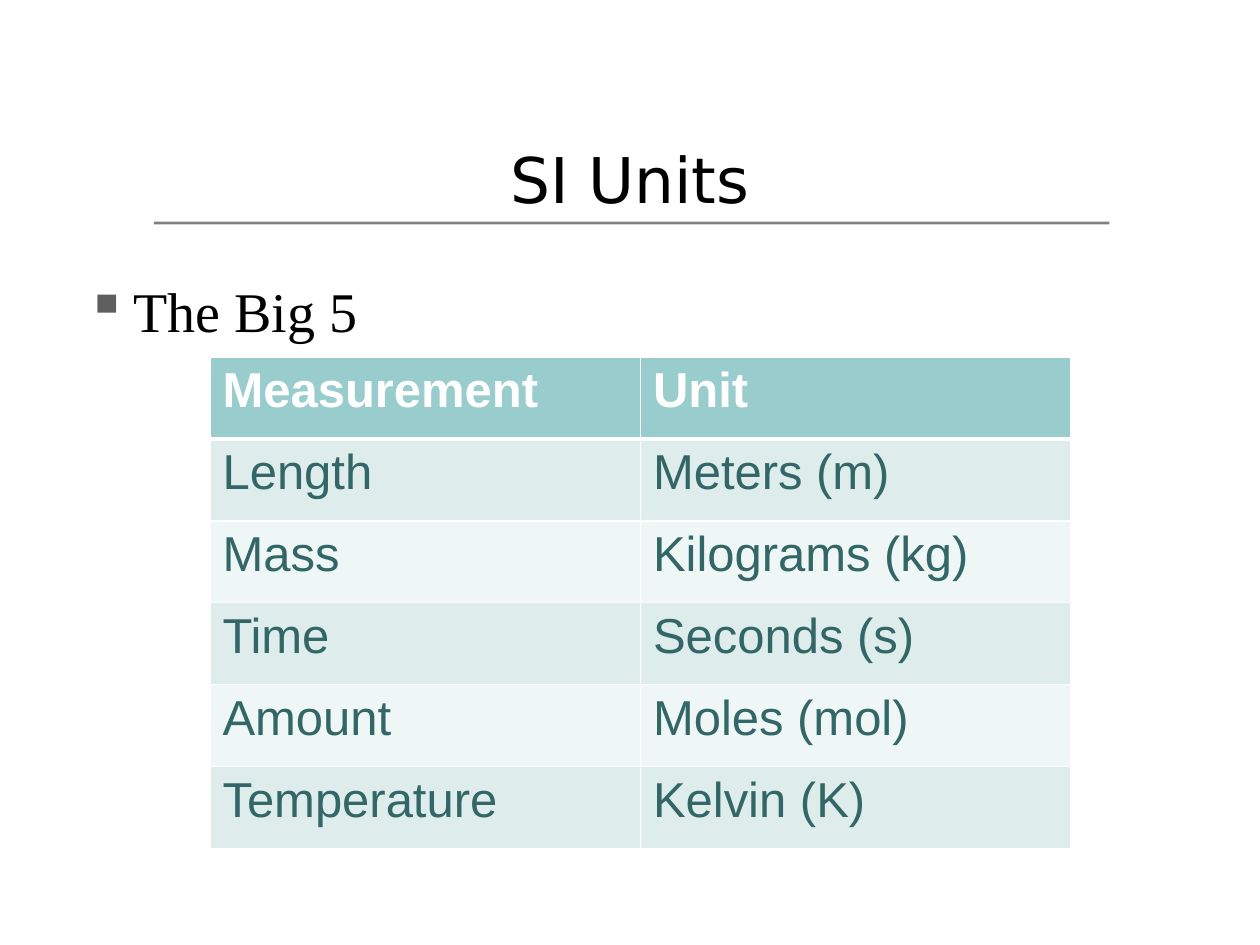
import pptx
import pptx.util
import pptx.dml.color
import pptx.enum.shapes
import pptx.enum.text
import pptx.oxml
import pptx.oxml.ns
from lxml import etree

Pt = pptx.util.Pt
qn = pptx.oxml.ns.qn

TITLE = "SI Units"
POINT = "The Big 5"
ROWS = [
    ("Measurement", "Unit"),
    ("Length", "Meters (m)"),
    ("Mass", "Kilograms (kg)"),
    ("Time", "Seconds (s)"),
    ("Amount", "Moles (mol)"),
    ("Temperature", "Kelvin (K)"),
]
THEME = {
    "title": ("DejaVu Sans", 36, "000000"),
    "point": ("Times New Roman", 32, "000000"),
    "head": ("Arial", 28, "FFFFFF"),
    "cell": ("Arial", 28, "336666"),
    "rule": "808080",
    "bullet": "5F5F5F",
    "grid": "FFFFFF",
    "top": "99CCCC",
    "bands": ("DEECEC", "EFF6F6"),
}
COL, ROW = 246, 46.8


def paint(fill, color):
    fill.solid()
    fill.fore_color.rgb = pptx.dml.color.RGBColor.from_string(color)


def style(para, role, bold=False):
    name, size, color = THEME[role]
    for run in para.runs:
        run.font.name, run.font.size, run.font.bold = name, Pt(size), bold
        paint(run.font.fill, color)


def place(shape, left, top, width, height):
    shape.left, shape.top = Pt(left), Pt(top)
    shape.width, shape.height = Pt(width), Pt(height)


def add_bullet(para, indent):
    props = para._p.get_or_add_pPr()
    props.set("marL", str(Pt(indent)))
    props.set("indent", str(-Pt(indent)))
    color = etree.SubElement(props, qn("a:buClr"))
    etree.SubElement(color, qn("a:srgbClr"), val=THEME["bullet"])
    etree.SubElement(props, qn("a:buChar"), char="▪")


def edge(cell, top, bottom):
    """Draw the cell's borders, one point wide at the sides."""
    props = cell._tc.get_or_add_tcPr()
    for side, width in (("L", 1), ("R", 1), ("T", top), ("B", bottom)):
        line = etree.SubElement(props, qn("a:ln" + side), w=str(Pt(width)))
        fill = etree.SubElement(line, qn("a:solidFill"))
        etree.SubElement(fill, qn("a:srgbClr"), val=THEME["grid"])


def add_units(slide):
    frame = slide.shapes.add_table(
        len(ROWS), 2, Pt(120), Pt(204), Pt(2 * COL), Pt(len(ROWS) * ROW))
    table = frame.table
    for col in table.columns:
        col.width = Pt(COL)
    for i, texts in enumerate(ROWS):
        table.rows[i].height = Pt(ROW)
        head = i == 0
        color = THEME["top"] if head else THEME["bands"][(i - 1) % 2]
        for j, text in enumerate(texts):
            cell = table.cell(i, j)
            edge(cell, 3 if i == 1 else 1, 3 if head else 1)
            paint(cell.fill, color)
            cell.text_frame.text = text
            style(cell.text_frame.paragraphs[0], "head" if head else "cell", head)


def main():
    deck = pptx.Presentation()
    deck.slide_width, deck.slide_height = Pt(720), Pt(540)
    slide = deck.slides.add_slide(deck.slide_layouts[5])

    title = slide.shapes.title
    place(title, 0, 66, 720, 72)
    title.text_frame.text = TITLE
    title.text_frame.vertical_anchor = pptx.enum.text.MSO_ANCHOR.MIDDLE
    para = title.text_frame.paragraphs[0]
    para.alignment = pptx.enum.text.PP_ALIGN.CENTER
    style(para, "title")

    rule = slide.shapes.add_shape(
        pptx.enum.shapes.MSO_SHAPE.RECTANGLE, Pt(88), Pt(126.7), Pt(546), Pt(1.5))
    rule.shadow.inherit = False
    rule.line.fill.background()
    paint(rule.fill, THEME["rule"])

    box = slide.shapes.add_textbox(Pt(42), Pt(150), Pt(630), Pt(324))
    box.text_frame.word_wrap = True
    box.text_frame.margin_top = Pt(8)
    box.text_frame.text = POINT
    para = box.text_frame.paragraphs[0]
    add_bullet(para, 27)
    style(para, "point")

    add_units(slide)
    deck.save("out.pptx")


if __name__ == "__main__":
    main()
